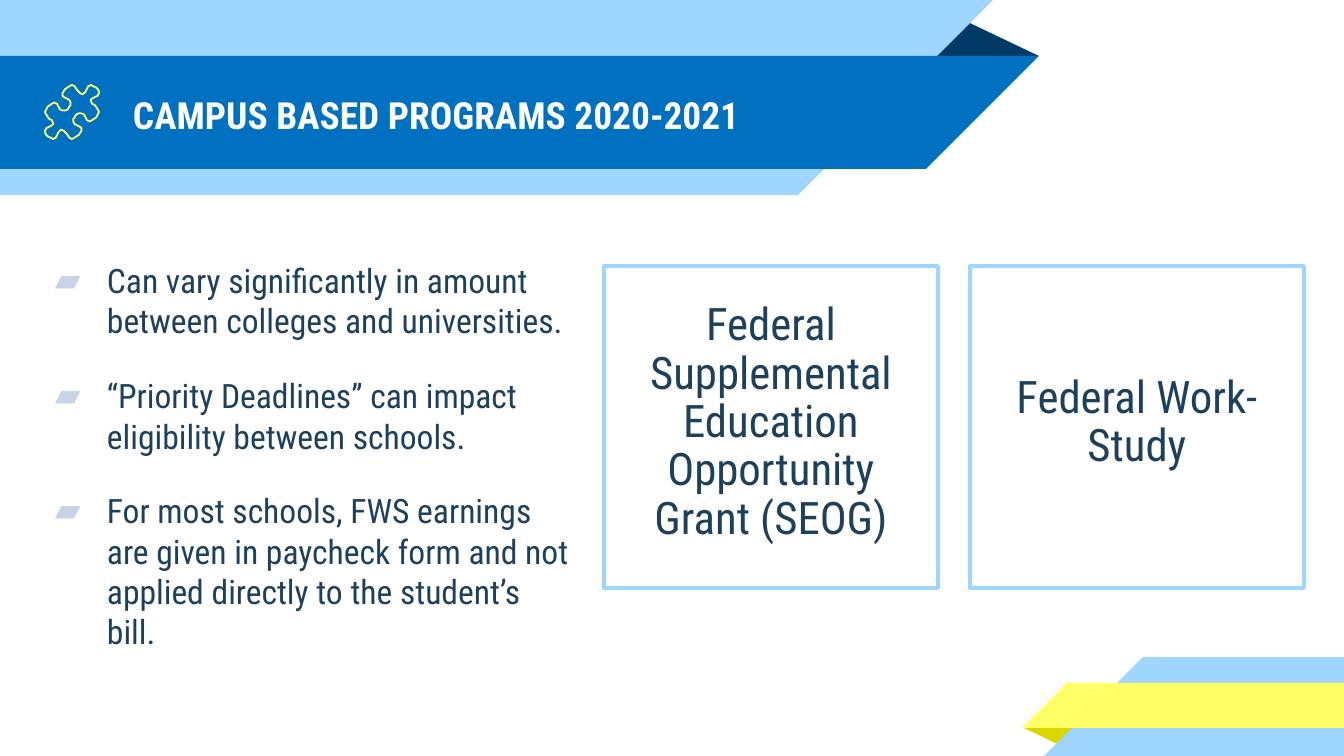
from lxml.etree import SubElement
from pptx import Presentation
from pptx.dml.color import RGBColor
from pptx.enum.shapes import MSO_SHAPE as Shape
from pptx.enum.text import MSO_ANCHOR as Anchor, PP_ALIGN as Align
from pptx.oxml.ns import qn
from pptx.util import Emu, Pt

SCALE = 914400 / 134.4
FONT = "Roboto Condensed"
SKY = RGBColor(0x9F, 0xD6, 0xFF)
BLUE = RGBColor(0x00, 0x70, 0xC0)
NAVY = RGBColor(0x00, 0x3B, 0x68)
YELLOW = RGBColor(0xFF, 0xFF, 0x66)
OLIVE = RGBColor(0xDB, 0xD6, 0x00)
INK = RGBColor(0x1D, 0x40, 0x5D)
WHITE = RGBColor(0xFF, 0xFF, 0xFF)

TITLE = "CAMPUS BASED PROGRAMS 2020-2021"
NOTES = [
    "Can vary significantly in amount between colleges and universities.",
    "“Priority Deadlines” can impact eligibility between schools.",
    "For most schools, FWS earnings are given in paycheck form and not "
    "applied directly to the student’s bill.",
]
PROGRAMS = [
    "Federal Supplemental Education Opportunity Grant (SEOG)",
    "Federal Work-Study",
]
PUZZLE_GRID = 40
PUZZLE_HALF = [
    (35, 10), (37, 9), (39, 8), (40, 6), (40, 5), (39, 3), (38, 2), (36, 1),
    (34, 0), (32, 1), (31, 3), (30, 5), (28, 7), (26, 6), (24, 4), (22, 1),
    (20, 0), (18, 1), (15, 3), (13, 6), (13, 8), (14, 9), (16, 10), (18, 11),
    (19, 13), (19, 15), (18, 16), (17, 18), (15, 19), (13, 19), (11, 18),
    (10, 16), (9, 14), (7, 13), (5, 14), (2, 16), (0, 20), (1, 22), (3, 25),
    (5, 26), (6, 28), (6, 29),
]


def px(length):
    return Emu(round(length * SCALE))


def add_solid(slide, kind, box, colour):
    solid = slide.shapes.add_shape(kind, *map(px, box))
    solid.shadow.inherit = False
    solid.fill.solid()
    solid.fill.fore_color.rgb = colour
    solid.line.fill.background()
    return solid


def add_outline(shape, colour, width):
    shape.shadow.inherit = False
    shape.fill.background()
    shape.line.color.rgb = colour
    shape.line.width = Pt(width)


def add_strip(slide, box, colour, points_right):
    left, top, width, height = box
    body_left = left if points_right else left + height
    tip_left = left + width - height if points_right else left
    add_solid(slide, Shape.RECTANGLE, (body_left, top, width - height, height), colour)
    tip = add_solid(slide, Shape.RIGHT_TRIANGLE, (tip_left, top, height, height), colour)
    tip.element.spPr.xfrm.set("flipH", "1")
    tip.rotation = 180 if points_right else 0


def add_fold(slide, box, colour, turn):
    fold = add_solid(slide, Shape.ISOSCELES_TRIANGLE, box, colour)
    fold.adjustments[0] = 0.32
    fold.rotation = turn


def add_text(slide, box, lines, size, colour, inset, anchor=Anchor.TOP):
    frame = slide.shapes.add_textbox(*map(px, box)).text_frame
    frame.word_wrap = True
    frame.vertical_anchor = anchor
    frame.margin_left = frame.margin_right = px(inset)
    frame.margin_top = frame.margin_bottom = px(inset)
    frame.text = "\n".join(lines)
    for paragraph in frame.paragraphs:
        font = paragraph.runs[0].font
        font.name, font.size, font.color.rgb = FONT, Pt(size), colour
    return frame


def add_puzzle(slide, left, top, size):
    other_half = [(PUZZLE_GRID - x, PUZZLE_GRID - y) for x, y in PUZZLE_HALF]
    outline = PUZZLE_HALF + other_half
    builder = slide.shapes.build_freeform(*outline[0], scale=px(size) / PUZZLE_GRID)
    builder.add_line_segments(outline[1:], close=True)
    add_outline(builder.convert_to_shape(px(left), px(top)), YELLOW, 0.96)


def add_header(slide, box):
    left, top, width, height = box
    add_fold(slide, (left + width - 114, top + 19, 114, 37), NAVY, 0)
    add_strip(slide, (left, top, width - 46, height), SKY, True)
    add_strip(slide, (left, top + 56, width, 113), BLUE, True)
    title = add_text(slide, (left + 120, top + 58, 828, 113), [TITLE], 20, WHITE, 13, Anchor.MIDDLE)
    title.paragraphs[0].runs[0].font.bold = True
    add_puzzle(slide, left + 45, top + 85, 54)


def add_footer(slide, box):
    left, top, width, height = box
    add_fold(slide, (left, top + 70, 58, 19), OLIVE, 180)
    add_strip(slide, (left + 22, top, width - 22, height), SKY, False)
    add_strip(slide, (left, top + 26, width, 45), YELLOW, False)


def add_notes(slide, box):
    for paragraph in add_text(slide, box, NOTES, 18, INK, 13).paragraphs:
        paragraph.space_after = Pt(18.5)
        properties = paragraph._p.get_or_add_pPr()
        properties.set("marL", str(px(67)))
        properties.set("indent", str(-px(52)))
        tint = SubElement(properties, qn("a:buClr"))
        SubElement(tint, qn("a:srgbClr"), val="C7D3E6")
        SubElement(properties, qn("a:buFont"), typeface=FONT)
        SubElement(properties, qn("a:buChar"), char="▰")


def add_program(slide, box, program):
    left, top, width, height = box
    add_outline(slide.shapes.add_shape(Shape.RECTANGLE, *map(px, box)), SKY, 2)
    label_box = (left + 38, top + 36, width - 76, height - 80)
    label = add_text(slide, label_box, [program], 24, INK, 2, Anchor.MIDDLE)
    label.paragraphs[0].alignment = Align.CENTER
    label.paragraphs[0].line_spacing = 0.9


def main():
    deck = Presentation()
    deck.slide_width, deck.slide_height = px(1344), px(756)
    slide = deck.slides.add_slide(deck.slide_layouts[6])
    add_header(slide, (0, 0, 1039, 195))
    add_footer(slide, (1022, 657, 322, 99))
    add_notes(slide, (27, 247, 556, 425))
    for column, program in enumerate(PROGRAMS):
        add_program(slide, (604 + column * 366, 266, 334, 322), program)
    deck.save("out.pptx")


if __name__ == "__main__":
    main()
